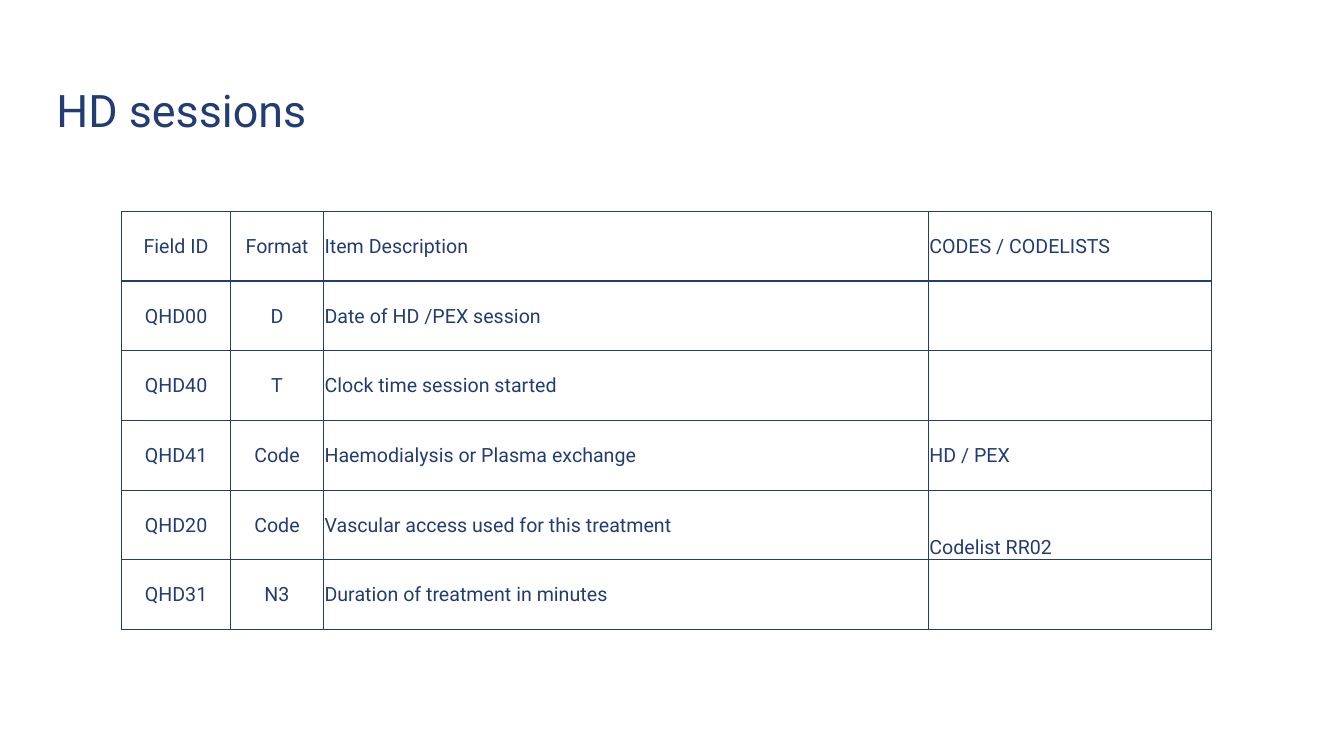
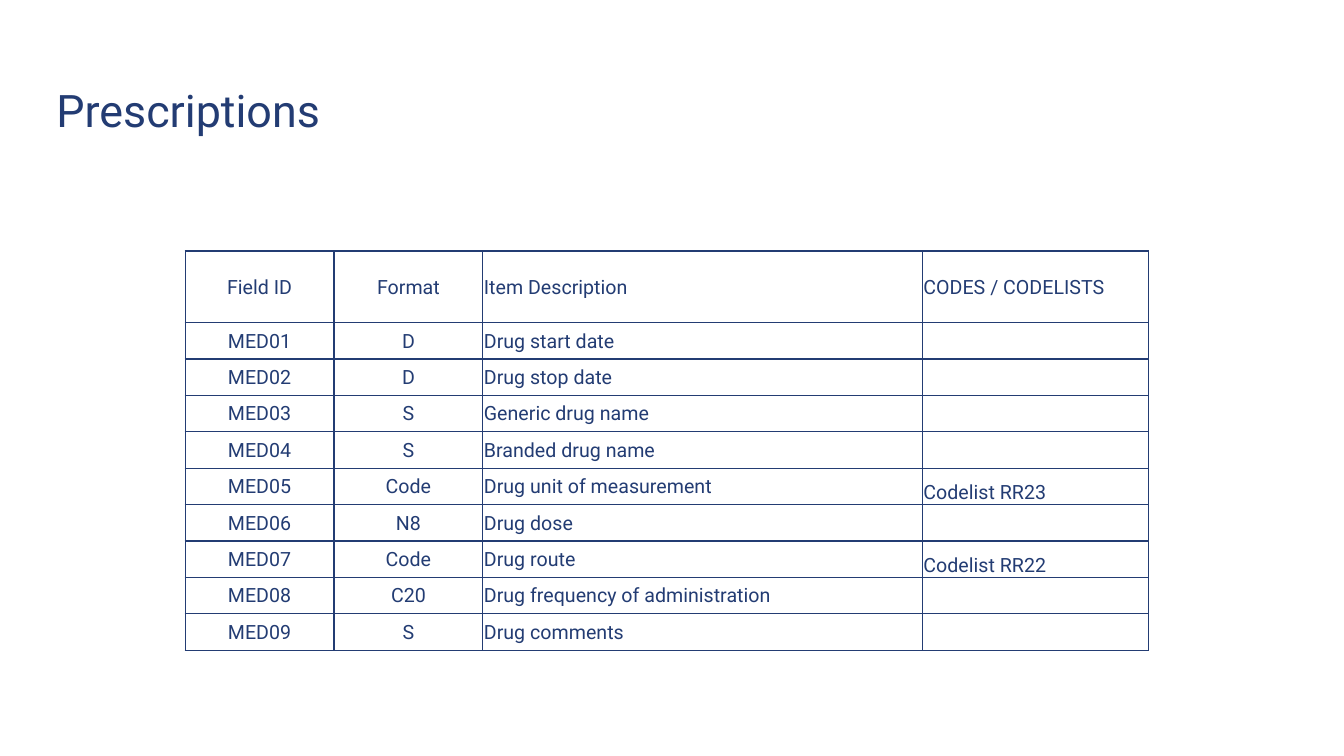
"""Builds two slides that list the data fields of a renal data set."""
from dataclasses import dataclass

from lxml import etree
from pptx import Presentation
from pptx.dml.color import RGBColor
from pptx.enum.text import MSO_ANCHOR, PP_ALIGN
from pptx.oxml.ns import qn
from pptx.util import Pt

LEFT, CENTER = PP_ALIGN.LEFT, PP_ALIGN.CENTER
MIDDLE, BOTTOM = MSO_ANCHOR.MIDDLE, MSO_ANCHOR.BOTTOM
NAVY = "233C73"
FONT = "Roboto"
HEADINGS = ("Field ID", "Format", "Item Description", "CODES / CODELISTS")
COLUMN_ALIGNMENTS = (CENTER, CENTER, LEFT, LEFT)
CELL_MARGIN = 0.75
BORDER_WIDTH = 1


@dataclass(frozen=True)
class FieldList:
    title: str
    left: float
    top: float
    column_widths: tuple[float, ...]
    heading_height: float
    field_height: float
    fields: tuple[tuple[str, str, str, str], ...]


FIELD_LISTS = (
    FieldList("HD sessions", 86.9, 151, (77.8, 66.4, 432, 202.2), 49.8, 49.8, (
        ("QHD00", "D", "Date of HD /PEX session", ""),
        ("QHD40", "T", "Clock time session started", ""),
        ("QHD41", "Code", "Haemodialysis or Plasma exchange", "HD / PEX"),
        ("QHD20", "Code", "Vascular access used for this treatment", "Codelist RR02"),
        ("QHD31", "N3", "Duration of treatment in minutes", ""),
    )),
    FieldList("Prescriptions", 132.3, 179.3, (106.3, 106.3, 314, 161.4), 51.2, 26, (
        ("MED01", "D", "Drug start date", ""),
        ("MED02", "D", "Drug stop date", ""),
        ("MED03", "S", "Generic drug name", ""),
        ("MED04", "S", "Branded drug name", ""),
        ("MED05", "Code", "Drug unit of measurement", "Codelist RR23"),
        ("MED06", "N8", "Drug dose", ""),
        ("MED07", "Code", "Drug route", "Codelist RR22"),
        ("MED08", "C20", "Drug frequency of administration", ""),
        ("MED09", "S", "Drug comments", ""),
    )),
)


def rgb(hex_color: str) -> RGBColor:
    return RGBColor.from_string(hex_color)


def write(frame, text: str, *, size: float, align=LEFT, color: str = NAVY) -> None:
    paragraph = frame.paragraphs[0]
    paragraph.alignment = align
    if text:
        run = paragraph.add_run()
        run.text = text
        run.font.name = FONT
        run.font.size = Pt(size)
        run.font.bold = False
        run.font.color.rgb = rgb(color)


def add_title(slide, title: str) -> None:
    frame = slide.shapes.add_textbox(Pt(40.3), Pt(28.8), Pt(751), Pt(99.4)).text_frame
    frame.word_wrap = True
    frame.vertical_anchor = MIDDLE
    frame.margin_left = frame.margin_right = frame.margin_top = frame.margin_bottom = 0
    write(frame, title, size=32)


def add_borders(cell, color: str = NAVY) -> None:
    properties = cell._tc.get_or_add_tcPr()
    for side in ("a:lnL", "a:lnR", "a:lnT", "a:lnB"):
        border = etree.SubElement(properties, qn(side), w=str(Pt(BORDER_WIDTH)))
        fill = etree.SubElement(border, qn("a:solidFill"))
        etree.SubElement(fill, qn("a:srgbClr"), val=color)


def format_cell(cell, text: str, align) -> None:
    cell.margin_left = cell.margin_right = cell.margin_top = Pt(CELL_MARGIN)
    cell.margin_bottom = 0
    cell.vertical_anchor = BOTTOM if text.startswith("Codelist ") else MIDDLE
    add_borders(cell)
    cell.fill.background()
    write(cell.text_frame, text, size=14, align=align)


def add_field_table(slide, field_list: FieldList) -> None:
    rows = (HEADINGS, *field_list.fields)
    heights = (field_list.heading_height,) + (field_list.field_height,) * len(field_list.fields)
    table = slide.shapes.add_table(
        len(rows), len(HEADINGS), Pt(field_list.left), Pt(field_list.top),
        Pt(sum(field_list.column_widths)), Pt(sum(heights))).table
    table.first_row = table.horz_banding = False
    for column, width in zip(table.columns, field_list.column_widths):
        column.width = Pt(width)
    for row, height, texts in zip(table.rows, heights, rows):
        row.height = Pt(height)
        for cell, text, align in zip(row.cells, texts, COLUMN_ALIGNMENTS):
            format_cell(cell, text, align)


def main() -> None:
    presentation = Presentation()
    presentation.slide_width, presentation.slide_height = Pt(960), Pt(540)
    blank = presentation.slide_layouts[6]
    for field_list in FIELD_LISTS:
        slide = presentation.slides.add_slide(blank)
        add_title(slide, field_list.title)
        add_field_table(slide, field_list)
    presentation.save("out.pptx")


if __name__ == "__main__":
    main()
